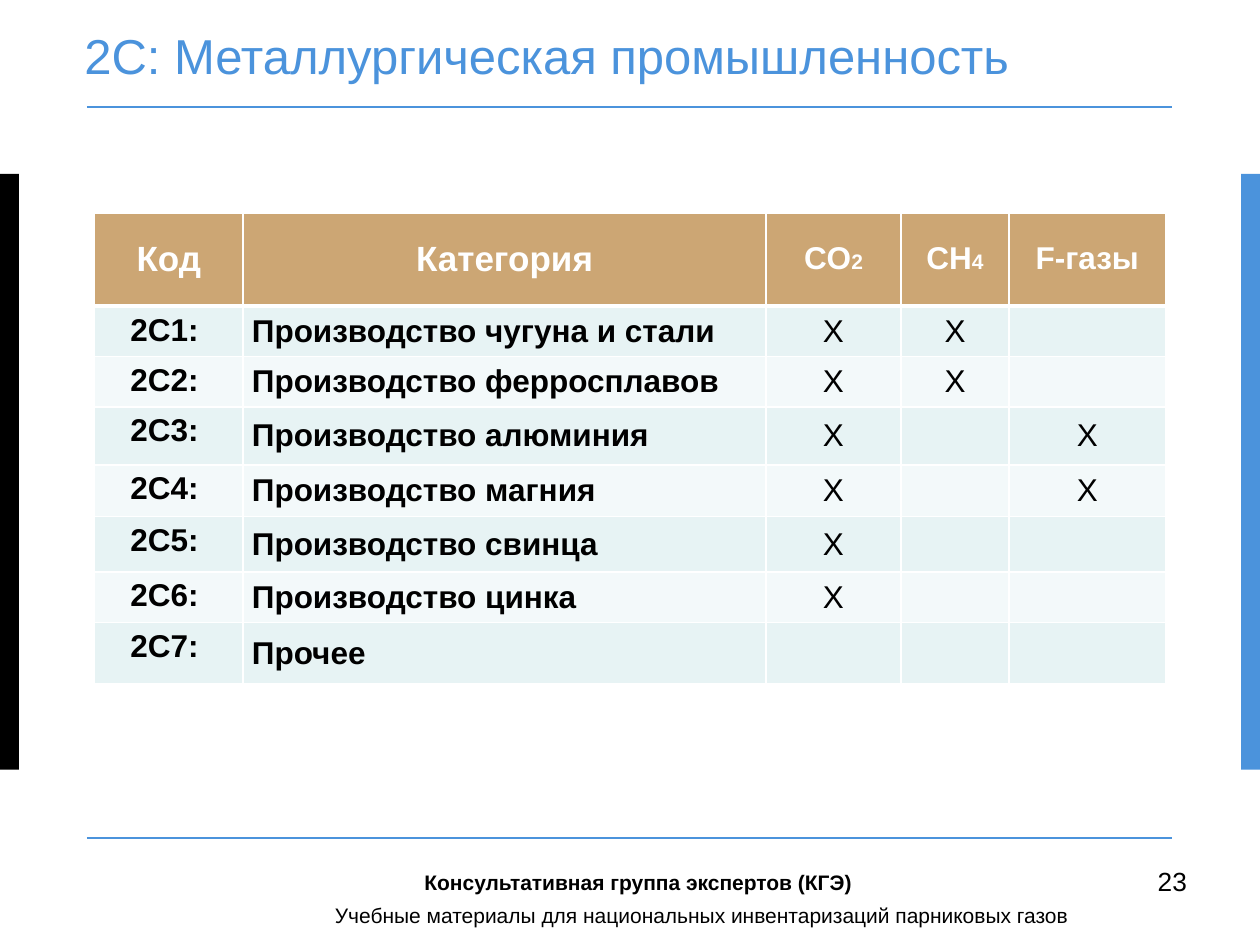
from dataclasses import dataclass

import pptx
import pptx.dml.color
import pptx.enum.shapes
import pptx.enum.text
import pptx.oxml
import pptx.oxml.ns
import pptx.util

Inches = pptx.util.Inches
Pt = pptx.util.Pt
ALIGN = pptx.enum.text.PP_ALIGN
ANCHOR = pptx.enum.text.MSO_ANCHOR


@dataclass(frozen=True)
class Theme:
    font: str = "Arial"
    blue: str = "4B93DC"
    black: str = "000000"
    white: str = "FFFFFF"
    header: str = "CCA674"
    bands: tuple = ("E7F3F4", "F3F9FA")
    title_size: int = 28
    heading_size: int = 20
    body_size: int = 18
    number_size: int = 15
    small_size: int = 12


THEME = Theme()
COLUMN_WIDTHS = (1.18, 4.15, 1.07, 0.86, 1.24)
ROW_HEIGHTS = (0.75, 0.4, 0.4, 0.46, 0.41, 0.44, 0.4, 0.49)
HEADINGS = (("Код", ""), ("Категория", ""), ("CO", "2"), ("CH", "4"), ("F-газы", ""))
CATEGORIES = (
    ("Производство чугуна и стали", "X", "X", ""),
    ("Производство ферросплавов", "X", "X", ""),
    ("Производство алюминия", "X", "", "X"),
    ("Производство магния", "X", "", "X"),
    ("Производство свинца", "X", "", ""),
    ("Производство цинка", "X", "", ""),
    ("Прочее", "", "", ""),
)


def rgb(color):
    return pptx.dml.color.RGBColor.from_string(color)


def add_text(paragraph, text, size=THEME.body_size, color=THEME.black, bold=False, align=ALIGN.LEFT):
    paragraph.alignment = align
    run = paragraph.add_run()
    run.text = text
    run.font.name = THEME.font
    run.font.size = Pt(size)
    run.font.bold = bold
    run.font.color.rgb = rgb(color)


def add_text_box(slide, text, left, top, width, height, **text_format):
    shape = slide.shapes.add_textbox(Inches(left), Inches(top), Inches(width), Inches(height))
    shape.text_frame.word_wrap = True
    add_text(shape.text_frame.paragraphs[0], text, **text_format)


def add_side_bar(slide, left, color):
    shape = slide.shapes.add_shape(
        pptx.enum.shapes.MSO_SHAPE.RECTANGLE, Inches(left), Inches(1.38), Inches(0.15), Inches(4.73))
    shape.shadow.inherit = False
    shape.fill.solid()
    shape.fill.fore_color.rgb = rgb(color)
    shape.line.fill.background()


def add_rule(slide, top):
    connector = slide.shapes.add_connector(
        pptx.enum.shapes.MSO_CONNECTOR.STRAIGHT, Inches(0.69), Inches(top), Inches(9.3), Inches(top))
    connector.line.color.rgb = rgb(THEME.blue)
    connector.line.width = Pt(1)
    properties = connector._element.spPr
    properties.append(properties.makeelement(pptx.oxml.ns.qn("a:effectLst"), {}))


def format_title(slide):
    title = slide.shapes.title
    title.left, title.top, title.width, title.height = map(Inches, (0.67, 0.29, 8.27, 0.55))
    frame = title.text_frame
    frame.margin_left = frame.margin_top = frame.margin_right = frame.margin_bottom = 0
    frame.vertical_anchor = ANCHOR.MIDDLE
    frame.auto_size = pptx.enum.text.MSO_AUTO_SIZE.NONE
    frame.paragraphs[0].line_spacing = Pt(15)
    add_text(frame.paragraphs[0], "2C: Металлургическая промышленность",
             size=THEME.title_size, color=THEME.blue)


def style_cell(cell, color, top_width, bottom_width):
    properties = cell._tc.get_or_add_tcPr()
    for side, width in (("L", 1), ("R", 1), ("T", top_width), ("B", bottom_width)):
        properties.append(pptx.oxml.parse_xml(
            f'<a:ln{side} {pptx.oxml.ns.nsdecls("a")} w="{Pt(width)}"><a:solidFill>'
            f'<a:srgbClr val="{THEME.white}"/></a:solidFill></a:ln{side}>'))
    cell.fill.solid()
    cell.fill.fore_color.rgb = rgb(color)


def fill_header(table):
    for column, (text, subscript) in enumerate(HEADINGS):
        cell = table.cell(0, column)
        style_cell(cell, THEME.header, 3, 3)
        cell.vertical_anchor = ANCHOR.MIDDLE
        size = THEME.heading_size if column < 2 else THEME.body_size
        paragraph = cell.text_frame.paragraphs[0]
        add_text(paragraph, text, size=size, color=THEME.white, bold=True, align=ALIGN.CENTER)
        if subscript:
            add_text(paragraph, subscript, size=THEME.small_size, color=THEME.white,
                     bold=True, align=ALIGN.CENTER)


def fill_category(table, row, values):
    for column, text in enumerate((f"2C{row}: ", *values)):
        cell = table.cell(row, column)
        style_cell(cell, THEME.bands[(row - 1) % 2], 3 if row == 1 else 1, 1)
        if column:
            cell.vertical_anchor = ANCHOR.MIDDLE
            cell.margin_left = cell.margin_right = Inches(0.07)
            cell.margin_top = cell.margin_bottom = 0
        if text:
            add_text(cell.text_frame.paragraphs[0], text, bold=column < 2,
                     align=ALIGN.LEFT if column == 1 else ALIGN.CENTER)


def add_category_table(slide):
    table = slide.shapes.add_table(
        len(ROW_HEIGHTS), len(COLUMN_WIDTHS), Inches(0.75), Inches(1.68),
        Inches(sum(COLUMN_WIDTHS)), Inches(sum(ROW_HEIGHTS))).table
    table.horz_banding = False
    for column, width in zip(table.columns, COLUMN_WIDTHS):
        column.width = Inches(width)
    for row, height in zip(table.rows, ROW_HEIGHTS):
        row.height = Inches(height)
    fill_header(table)
    for row, values in enumerate(CATEGORIES, start=1):
        fill_category(table, row, values)


def main():
    presentation = pptx.Presentation()
    presentation.slide_width, presentation.slide_height = Inches(10), Inches(7.5)
    slide = presentation.slides.add_slide(presentation.slide_layouts.get_by_name("Title Only"))
    add_side_bar(slide, 0, THEME.black)
    add_side_bar(slide, 9.85, THEME.blue)
    add_rule(slide, 0.85)
    add_rule(slide, 6.65)
    format_title(slide)
    add_category_table(slide)
    add_text_box(slide, "23", 9.09, 6.82, 0.47, 0.35, size=THEME.number_size)
    add_text_box(slide, "Учебные материалы для национальных инвентаризаций парниковых газов",
                 2.56, 7.11, 6.04, 0.18, size=THEME.small_size)
    add_text_box(slide, "Консультативная группа экспертов (КГЭ)",
                 3.27, 6.85, 3.7, 0.27, size=THEME.small_size, bold=True)
    presentation.save("out.pptx")


if __name__ == "__main__":
    main()
